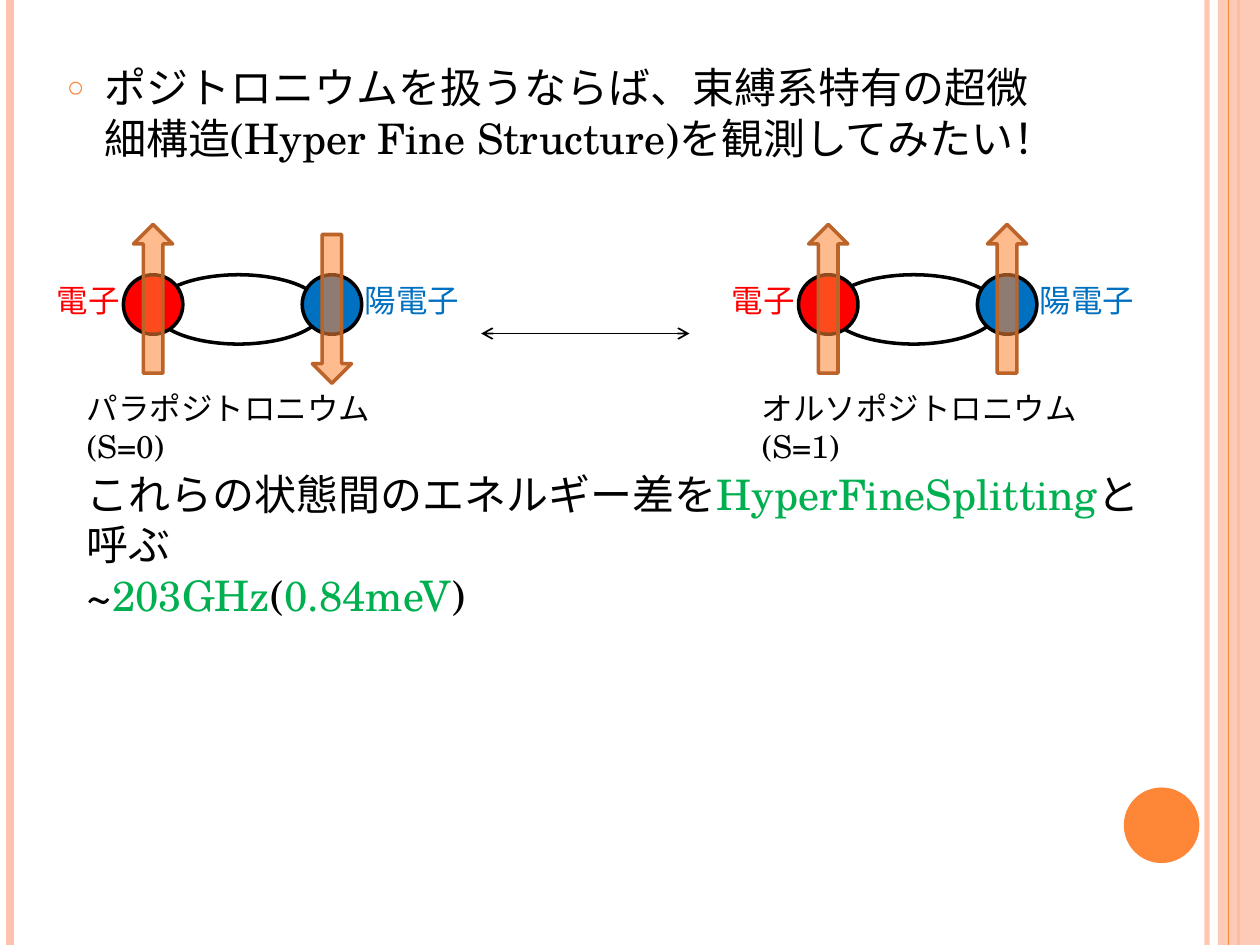
"""Build a slide on the hyperfine structure of positronium."""
from dataclasses import dataclass

from lxml import etree
from pptx import Presentation, util as u
from pptx.dml import color
from pptx.enum import shapes, text
from pptx.oxml import ns

Pt = u.Pt
KIND = shapes.MSO_SHAPE


@dataclass(frozen=True)
class Theme:
    serif: str = "TeX Gyre Schola"
    sans: str = "Noto Sans CJK JP"
    body: int = 24
    small: int = 18
    black: str = "000000"
    red: str = "FF0000"
    blue: str = "0070C0"
    green: str = "00B050"
    orange: str = "FE8637"
    peach: str = "FEC3AE"
    brown: str = "BC6329"


T = Theme()


def rgb(value):
    return color.RGBColor.from_string(value)


def sub(parent, tag, **attrs):
    return etree.SubElement(parent, ns.qn(tag), attrs)


def set_alpha(fill_parent, percent):
    clr = next(fill_parent.iter(ns.qn("a:srgbClr")))
    sub(clr, "a:alpha", val=str(percent * 1000))


def add_shape(parent, kind, box, fill=None, line=None, alpha=None):
    sp = parent.add_shape(kind, *map(Pt, box))
    sp.shadow.inherit = False
    if fill:
        sp.fill.solid()
        sp.fill.fore_color.rgb = rgb(fill)
        if alpha:
            set_alpha(sp._element.spPr, alpha)
    else:
        sp.fill.background()
    if line:
        sp.line.color.rgb = rgb(line)
        sp.line.width = Pt(2)
    else:
        sp.line.fill.background()
    return sp


def add_line(parent, start, end, line, width, alpha=None, arrows=False):
    ln = parent.add_connector(shapes.MSO_CONNECTOR.STRAIGHT, *map(Pt, start + end))
    ln.line.color.rgb = rgb(line)
    ln.line.width = Pt(width)
    if alpha:
        set_alpha(ln._element.spPr, alpha)
    if arrows:
        for tag in ("a:headEnd", "a:tailEnd"):
            sub(ln.line._get_or_add_ln(), tag, type="arrow")
    sub(ln._element.spPr, "a:effectLst")
    return ln


def add_runs(p, runs, size, font=T.serif):
    for words, fill in runs:
        r = p.add_run()
        r.text = words
        r.font.size = Pt(size)
        r.font.color.rgb = rgb(fill)
        r.font.name = font
        sub(r._r.get_or_add_rPr(), "a:ea", typeface=font)


def add_text(parent, box, lines, size, font=T.serif, wrap=True):
    tf = parent.add_textbox(*map(Pt, box)).text_frame
    tf.word_wrap = wrap
    for i, runs in enumerate(lines):
        p = tf.paragraphs[0] if i == 0 else tf.add_paragraph()
        add_runs(p, runs, size, font)


def add_decor(parent):
    """Draw the side stripes and the page-number disc."""
    for x, line, width, alpha in ((689.8, T.peach, 3, 93), (5.8, T.peach, 4.5, None),
                                  (707.8, T.orange, 1.5, None)):
        add_line(parent, (x, 0), (x, 540), line, width, alpha)
    add_shape(parent, KIND.RECTANGLE, (696, 0, 24, 540), T.peach, alpha=87)
    add_line(parent, (702, 0), (702, 540), T.orange, 0.75)
    add_shape(parent, KIND.OVAL, (642.2, 450, 43.2, 43.2), T.orange)


def fill_body(slide):
    """Place the bulleted statement in the body placeholder."""
    slide.shapes.title._element.getparent().remove(slide.shapes.title._element)
    sp = slide.placeholders[1]
    sp.left, sp.top, sp.width, sp.height = map(Pt, (31, 31.7, 588, 73.4))
    tf = sp.text_frame
    tf.vertical_anchor = text.MSO_ANCHOR.TOP
    p = tf.paragraphs[0]
    p.space_before = Pt(6)
    pPr = p._p.get_or_add_pPr()
    pPr.set("marL", str(Pt(21.6)))
    pPr.set("indent", str(-Pt(21.6)))
    sub(sub(pPr, "a:buClr"), "a:srgbClr", val=T.orange)
    sub(pPr, "a:buSzPct", val="70000")
    sub(pPr, "a:buChar", char="○")
    add_runs(p, [("ポジトロニウムを扱うならば、束縛系特有の超微細構造"
                  "(Hyper Fine Structure)を観測してみたい！", T.black)], T.body)


def add_positronium(parent, x, caption, caption_width, positron_up):
    """Draw one bound electron-positron pair with its spins and labels."""
    group = parent.add_group_shape().shapes
    ball, arrow_w, arrow_h, top = 34, 22.4, 85, 157
    electron, positron = x + 62.3, x + 164.5
    middle = (electron + positron) / 2
    add_shape(group, KIND.OVAL, (middle - 50.5, top, 96.5, 39.6), line=T.black)
    for center, fill in ((positron, T.blue), (electron, T.red)):
        add_shape(group, KIND.OVAL, (center - ball / 2, top, ball, ball), fill, T.black)
    for center, up in ((electron, True), (positron, positron_up)):
        kind, y = (KIND.UP_ARROW, 128.2) if up else (KIND.DOWN_ARROW, 134)
        add_shape(group, kind, (center - arrow_w / 2, y, arrow_w, arrow_h),
                  T.orange, T.brown, 56)
    for words, dx, width, fill in (("電子", 0, 51.1, T.red), ("陽電子", 176.2, 69.1, T.blue)):
        add_text(group, (x + dx, top, width, 28.8), [[(words, fill)]],
                 T.small, T.sans, wrap=False)
    add_text(group, (x + 17.3, 218.9, caption_width, 28.8), [[(caption, T.black)]], T.small)


def main():
    prs = Presentation()
    prs.slide_width, prs.slide_height = Pt(720), Pt(540)
    slide = prs.slides.add_slide(prs.slide_layouts[1])
    add_decor(slide.shapes)
    fill_body(slide)
    add_positronium(slide.shapes, 25.2, "パラポジトロニウム(S=0)", 195.8, False)
    add_positronium(slide.shapes, 411, "オルソポジトロニウム(S=1)", 213, True)
    add_line(slide.shapes, (275, 190.6), (394, 190.6), T.black, 1, arrows=True)
    add_text(slide.shapes, (42.5, 264.2, 638.6, 65.5), [
        [("これらの状態間のエネルギー差を", T.black), ("HyperFineSplitting", T.green),
         ("と呼ぶ", T.black)],
        [("~", T.black), ("203GHz", T.green), ("(", T.black),
         ("0.84meV", T.green), (")", T.black)],
    ], T.body)
    prs.save("out.pptx")


if __name__ == "__main__":
    main()
